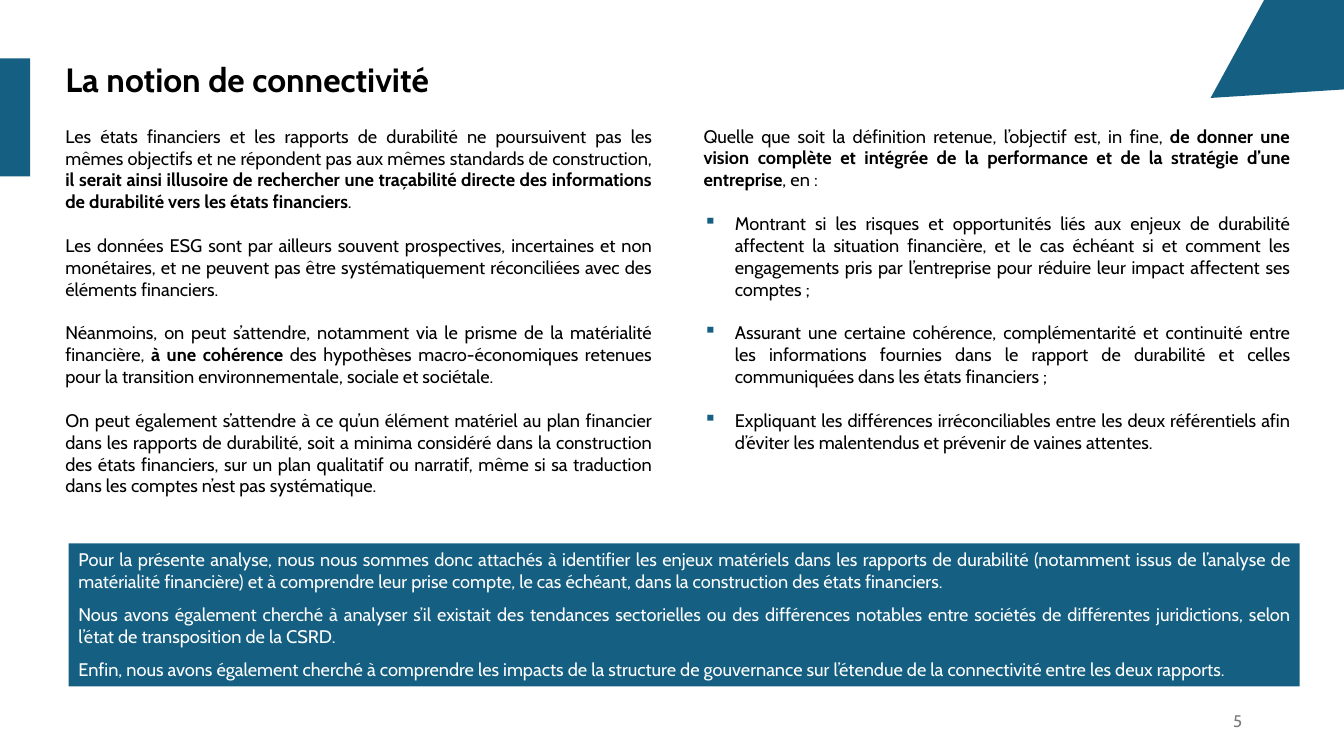
from lxml import etree
from pptx import Presentation
from pptx.dml.color import RGBColor
from pptx.enum.shapes import MSO_SHAPE
from pptx.enum.text import MSO_ANCHOR, MSO_AUTO_SIZE, PP_ALIGN
from pptx.oxml.ns import qn
from pptx.util import Inches, Pt

LEFT, RIGHT, JUSTIFY = PP_ALIGN.LEFT, PP_ALIGN.RIGHT, PP_ALIGN.JUSTIFY
TOP, MIDDLE = MSO_ANCHOR.TOP, MSO_ANCHOR.MIDDLE
GROW, FIXED = MSO_AUTO_SIZE.SHAPE_TO_FIT_TEXT, MSO_AUTO_SIZE.NONE
RECT, TRIANGLE = MSO_SHAPE.RECTANGLE, MSO_SHAPE.ISOSCELES_TRIANGLE

FONT = "Cabin"
BLUE, BLACK, WHITE, GREY = "156082", "000000", "FFFFFF", "797979"
WIDTH, HEIGHT = 13.33, 7.5
MARGIN, COL_W, COL_STEP = 0.55, 6.01, 6.33
BODY_PT, LINE_PT = 13, 15.6
INDENT = 0.31

# A paragraph is a list of (text, bold) runs
LEFT_PARAGRAPHS = [
    [("Les états financiers et les rapports de durabilité ne poursuivent pas les mêmes "
      "objectifs et ne répondent pas aux mêmes standards de construction, ", False),
     ("il serait ainsi illusoire de rechercher une traçabilité directe des informations "
      "de durabilité vers les états financiers", True),
     (".", False)],
    [("Les données ESG sont par ailleurs souvent prospectives, incertaines et non "
      "monétaires, et ne peuvent pas être systématiquement réconciliées avec des "
      "éléments financiers.", False)],
    [("Néanmoins, on peut s’attendre, notamment via le prisme de la matérialité "
      "financière, ", False),
     ("à une cohérence", True),
     (" des hypothèses macro-économiques retenues pour la transition "
      "environnementale, sociale et sociétale.", False)],
    [("On peut également s’attendre à ce qu’un élément matériel au plan financier dans "
      "les rapports de durabilité, soit a minima considéré dans la construction des "
      "états financiers, sur un plan qualitatif ou narratif, même si sa traduction dans "
      "les comptes n’est pas systématique.", False)],
]
RIGHT_INTRO = [
    ("Quelle que soit la définition retenue, l’objectif est, in fine, ", False),
    ("de donner une vision complète et intégrée de la performance et de la stratégie "
     "d’une entreprise", True),
    (", en :", False),
]
RIGHT_BULLETS = [
    [("Montrant si les risques et opportunités liés aux enjeux de durabilité affectent la "
      "situation financière, et le cas échéant si et comment les engagements pris par "
      "l’entreprise pour réduire leur impact affectent ses comptes ;", False)],
    [("Assurant une certaine cohérence, complémentarité et continuité entre les "
      "informations fournies dans le rapport de durabilité et celles communiquées dans "
      "les états financiers ;", False)],
    [("Expliquant les différences irréconciliables entre les deux référentiels afin "
      "d’éviter les malentendus et prévenir de vaines attentes.", False)],
]
BANNER_PARAGRAPHS = [
    [("Pour la présente analyse, nous nous sommes donc attachés à identifier les enjeux "
      "matériels dans les rapports de durabilité (notamment issus de l’analyse de "
      "matérialité financière) et à comprendre leur prise compte, le cas échéant, dans la "
      "construction des états financiers.", False)],
    [("Nous avons également cherché à analyser s’il existait des tendances sectorielles ou "
      "des différences notables entre sociétés de différentes juridictions, selon l’état "
      "de transposition de la CSRD.", False)],
    [("Enfin, nous avons également cherché à comprendre les impacts de la structure de "
      "gouvernance sur l’étendue de la connectivité entre les deux rapports.", False)],
]


def rgb(value):
    return RGBColor.from_string(value)


def add_bullet(p):
    pPr = p._p.get_or_add_pPr()
    pPr.set("marL", str(Inches(INDENT)))
    pPr.set("indent", str(-Inches(INDENT)))
    color = etree.SubElement(pPr, qn("a:buClr"))
    etree.SubElement(color, qn("a:srgbClr"), val=BLUE)
    etree.SubElement(pPr, qn("a:buChar"), char="▪")


def write(sp, paragraphs, size=BODY_PT, color=BLACK, align=JUSTIFY, anchor=TOP,
          gap=0, bullets_from=None, autosize=GROW):
    tf = sp.text_frame
    tf.word_wrap = True
    tf.auto_size = autosize
    tf.vertical_anchor = anchor
    for i, runs in enumerate(paragraphs):
        p = tf.add_paragraph() if i else tf.paragraphs[0]
        p.alignment = align
        if i and gap:
            p.space_before = Pt(gap)
        if bullets_from is not None and i >= bullets_from:
            add_bullet(p)
        for text, bold in runs:
            r = p.add_run()
            r.text = text
            r.font.name, r.font.size, r.font.bold = FONT, Pt(size), bold
            r.font.color.rgb = rgb(color)


def add_text(slide, box, paragraphs, **fmt):
    sp = slide.shapes.add_textbox(*map(Inches, box))
    write(sp, paragraphs, **fmt)


def add_block(slide, kind, box, rotation=0):
    sp = slide.shapes.add_shape(kind, *map(Inches, box))
    sp.shadow.inherit = False
    sp.fill.solid()
    sp.fill.fore_color.rgb = rgb(BLUE)
    sp.line.fill.background()
    sp.rotation = rotation
    return sp


def add_decor(slide):
    add_block(slide, RECT, (0, 0.58, 0.3, 1.17))
    add_block(slide, TRIANGLE, (11.79, -0.32, 1.85, 1.68), rotation=237.5)


def add_header(slide, box):
    add_text(slide, box, [[("La notion de connectivité", True)]], size=24, align=LEFT)


def add_columns(slide, left, top):
    add_text(slide, (left, top, COL_W, 3.82), LEFT_PARAGRAPHS, gap=LINE_PT)
    add_text(slide, (left + COL_STEP, top, COL_W, 3.6), [RIGHT_INTRO] + RIGHT_BULLETS,
             gap=LINE_PT, bullets_from=1)


def add_banner(slide, box):
    sp = add_block(slide, RECT, box)
    write(sp, BANNER_PARAGRAPHS, color=WHITE, gap=8)


def add_page_number(slide, box):
    add_text(slide, box, [[("5", False)]], size=12, color=GREY, align=RIGHT,
             anchor=MIDDLE, autosize=FIXED)


def main():
    prs = Presentation()
    prs.slide_width, prs.slide_height = Inches(WIDTH), Inches(HEIGHT)
    slide = prs.slides.add_slide(prs.slide_layouts[6])
    add_decor(slide)
    add_header(slide, (MARGIN, 0.54, COL_W, 0.5))
    add_columns(slide, MARGIN, 1.19)
    add_banner(slide, (0.68, 5.39, 12.21, 1.42))
    add_page_number(slide, (9.42, 6.95, 3, 0.4))
    prs.save("out.pptx")


if __name__ == "__main__":
    main()
